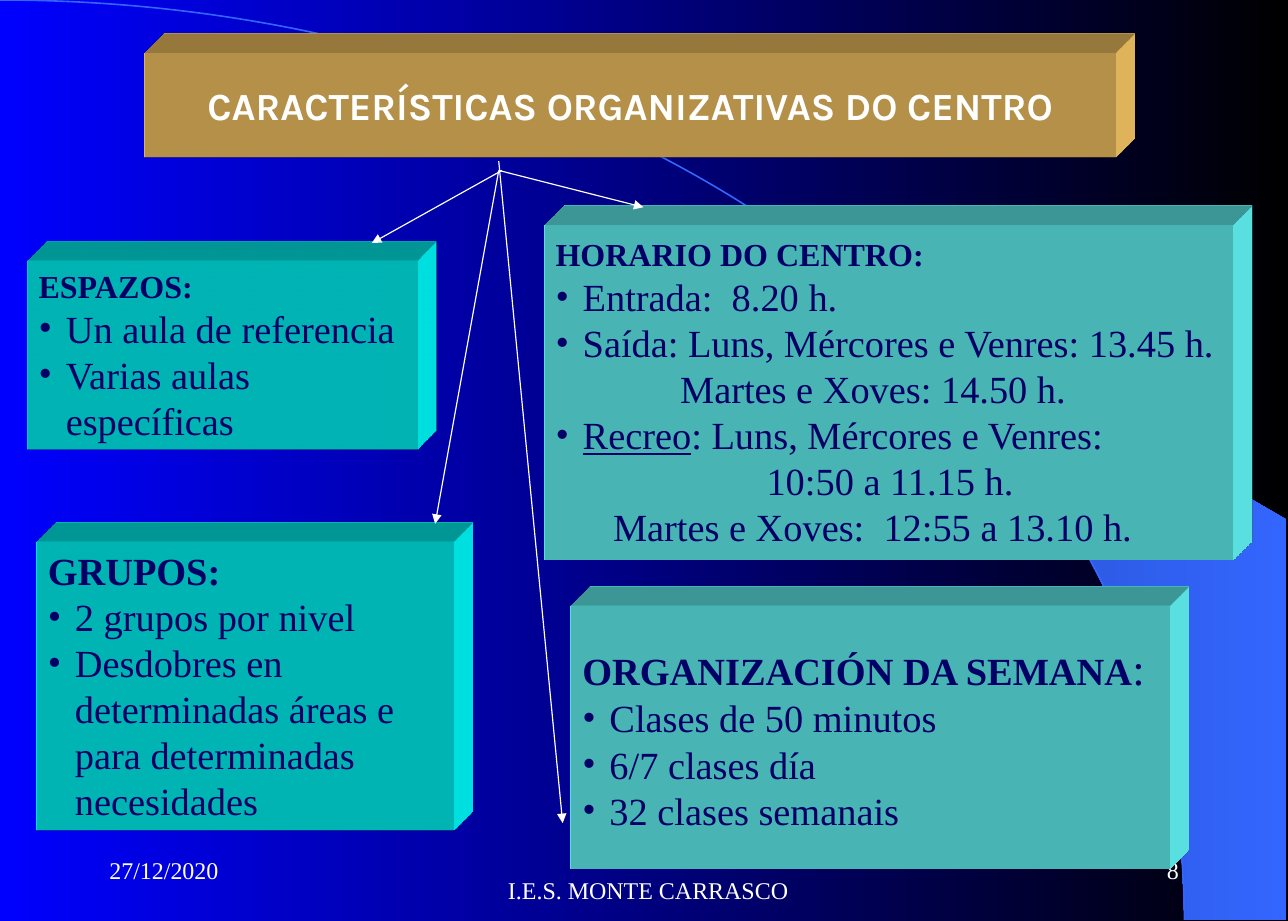
"""Build the slide on how the school centre is organised."""
from math import cos, pi, sin

from lxml.etree import SubElement
from pptx import Presentation
from pptx.dml.color import RGBColor
from pptx.enum.shapes import MSO_CONNECTOR, MSO_SHAPE
from pptx.enum.text import MSO_ANCHOR as Anchor, MSO_AUTO_SIZE as AutoSize, PP_ALIGN as Align
from pptx.oxml.ns import qn
from pptx.util import Pt


def paint(fill, *colours):
    if len(colours) == 1:
        fill.solid()
        fill.fore_color.rgb = RGBColor.from_string(colours[0])
    else:
        fill.gradient()
        fill.gradient_angle = 0
        for stop, colour in zip(fill.gradient_stops, colours):
            stop.color.rgb = RGBColor.from_string(colour)


def write(para, text, size=24, bold=False, underline=False, colour="000066", font="Times New Roman"):
    span = para.add_run()
    span.text = text
    span.font.size = Pt(size)
    span.font.bold = bold
    span.font.underline = underline
    span.font.name = font
    paint(span.font.fill, colour)


INDENT = 17
RADIUS_X, RADIUS_Y = 740.9, 575.3

deck = Presentation()
deck.slide_width, deck.slide_height = Pt(805.7), Pt(576)
slide = deck.slides.add_slide(deck.slide_layouts[5])
shapes = slide.shapes
paint(slide.background.fill, "0000FF", "000000")

angles = [0.695 + (pi / 2 - 0.695) * step / 15 for step in range(16)]
edge = [(Pt(RADIUS_X * sin(angle)), Pt(RADIUS_Y * (1 - cos(angle)))) for angle in angles]
builder = shapes.build_freeform(*edge[0])
builder.add_line_segments(edge[1:] + [(Pt(804.2), Pt(575.3)), (Pt(804.2), Pt(324.7))], close=True)
wedge = builder.convert_to_shape()
wedge.shadow.inherit = False
paint(wedge.fill, "2449B6", "3366FF")
wedge.line.fill.background()

builder = shapes.build_freeform(0, 0)
builder.add_line_segments([(Pt(RADIUS_X), Pt(RADIUS_Y))], close=False)
arc = builder.convert_to_shape()
arc.shadow.inherit = False
arc.fill.background()
paint(arc.line.fill, "3366FF")
arc.line.width = Pt(1)
bend = next(arc._element.iter(qn("a:lnTo")))
bend.tag = qn("a:cubicBezTo")
end_point = bend[0]
for x, y in [(409, 0), (RADIUS_X, 257.8)]:
    end_point.addprevious(SubElement(bend, qn("a:pt"), x=str(Pt(x)), y=str(Pt(y))))

footers = [
    ("27/12/2020", 60.5, 525, 168, Align.LEFT),
    ("I.E.S. MONTE CARRASCO", 278, 537.8, 255, Align.CENTER),
    ("8", 577.3, 525, 168, Align.RIGHT),
]
for text, left, top, width, align in footers:
    box = shapes.add_textbox(Pt(left), Pt(top), Pt(width), Pt(38))
    frame = box.text_frame
    frame.word_wrap = True
    frame.vertical_anchor = Anchor.MIDDLE
    frame.margin_left = frame.margin_right = Pt(7.9)
    frame.paragraphs[0].alignment = align
    write(frame.paragraphs[0], text, size=15, colour="FFFFFF")

heading = {"bold": True}
small_heading = {"bold": True, "size": 20}

blocks = [
    (90.7, 33, 607, 65.5, "FFCC66", Anchor.MIDDLE, []),
    (17.1, 163.2, 244, 118, "00FFFF", Anchor.TOP, [
        (0, False, [("ESPAZOS:", small_heading)]),
        (INDENT, True, [("Un aula de referencia", {})]),
        (INDENT, True, [("Varias aulas específicas", {})]),
    ]),
    (340.4, 140.6, 431, 209.5, "66FFFF", Anchor.MIDDLE, [
        (0, False, [("HORARIO DO CENTRO:", small_heading)]),
        (INDENT, True, [("Entrada:  8.20 h.", {})]),
        (INDENT, True, [("Saída: Luns, Mércores e Venres: 13.45 h.", {})]),
        (78, False, [("Martes e Xoves: 14.50 h.", {})]),
        (INDENT, True, [("Recreo", {"underline": True}), (": Luns, Mércores e Venres:", {})]),
        (132, False, [("10:50 a 11.15 h.", {})]),
        (36, False, [("Martes e Xoves:  12:55 a 13.10 h.", {})]),
    ]),
    (22.8, 338.8, 260.6, 180.5, "00FFFF", Anchor.TOP, [
        (0, False, [("GRUPOS:", heading)]),
        (INDENT, True, [("2 grupos por nivel", {})]),
        (INDENT, True, [("Desdobres en determinadas áreas e para determinadas necesidades", {})]),
    ]),
    (357.2, 378.7, 374.4, 164.2, "66FFFF", Anchor.MIDDLE, [
        (0, False, [("ORGANIZACIÓN DA SEMANA", heading), (":", {"size": 28})]),
        (INDENT, True, [("Clases de 50 minutos", {})]),
        (INDENT, True, [("6/7 clases día", {})]),
        (INDENT, True, [("32 clases semanais", {})]),
    ]),
]
for left, top, width, height, colour, anchor, rows in blocks:
    box = shapes.add_shape(MSO_SHAPE.RECTANGLE, Pt(left), Pt(top), Pt(width), Pt(height))
    box.shadow.inherit = False
    paint(box.fill, colour)
    box.line.fill.background()

    scene = SubElement(box._element.spPr, qn("a:scene3d"))
    SubElement(scene, qn("a:camera"), prst="legacyObliqueTopRight")
    SubElement(scene, qn("a:lightRig"), rig="legacyFlat3", dir="b")
    solid = SubElement(box._element.spPr, qn("a:sp3d"), extrusionH="430200", prstMaterial="legacyMatte")
    for bevel in ("a:bevelT", "a:bevelB"):
        SubElement(solid, qn(bevel), w="13500", h="13500", prst="angle")
    SubElement(SubElement(solid, qn("a:extrusionClr")), qn("a:srgbClr"), val=colour)

    frame = box.text_frame
    frame.word_wrap = True
    frame.auto_size = AutoSize.NONE
    frame.vertical_anchor = anchor
    for index, (margin, bullet, spans) in enumerate(rows):
        para = frame.add_paragraph() if index else frame.paragraphs[0]
        para.alignment = Align.LEFT
        para.line_spacing = Pt(1.2 * max(style.get("size", 24) for _, style in spans))
        properties = para._p.get_or_add_pPr()
        properties.set("marL", str(Pt(margin)))
        properties.set("indent", str(Pt(-INDENT if bullet else 0)))
        if bullet:
            SubElement(properties, qn("a:buFont"), typeface="Times New Roman")
            SubElement(properties, qn("a:buChar"), char="•")
        for text, style in spans:
            write(para, text, **style)

title = shapes.title
shapes._spTree.append(title._element)
title.left, title.top, title.width, title.height = [Pt(value) for value in blocks[0][:4]]
title.text_frame.word_wrap = True
title.text_frame.auto_size = AutoSize.NONE
title.text_frame.vertical_anchor = Anchor.MIDDLE
title.text_frame.paragraphs[0].alignment = Align.CENTER
write(title.text_frame.paragraphs[0], "CARACTERÍSTICAS ORGANIZATIVAS DO CENTRO",
      bold=True, font="Karla", colour="FFFFFF")

arrows = [
    (314, 106.6, 232.6, 152),
    (312, 106.6, 272.2, 327.6),
    (312, 100.8, 352, 514.8),
    (312, 106.6, 402.5, 129.6),
]
for ends in arrows:
    arrow = shapes.add_connector(MSO_CONNECTOR.STRAIGHT, *[Pt(end) for end in ends])
    paint(arrow.line.fill, "FFFFFF")
    arrow.line.width = Pt(0.75)
    SubElement(arrow.line._get_or_add_ln(), qn("a:tailEnd"), type="triangle")
    SubElement(arrow._element.spPr, qn("a:effectLst"))

deck.save("out.pptx")
